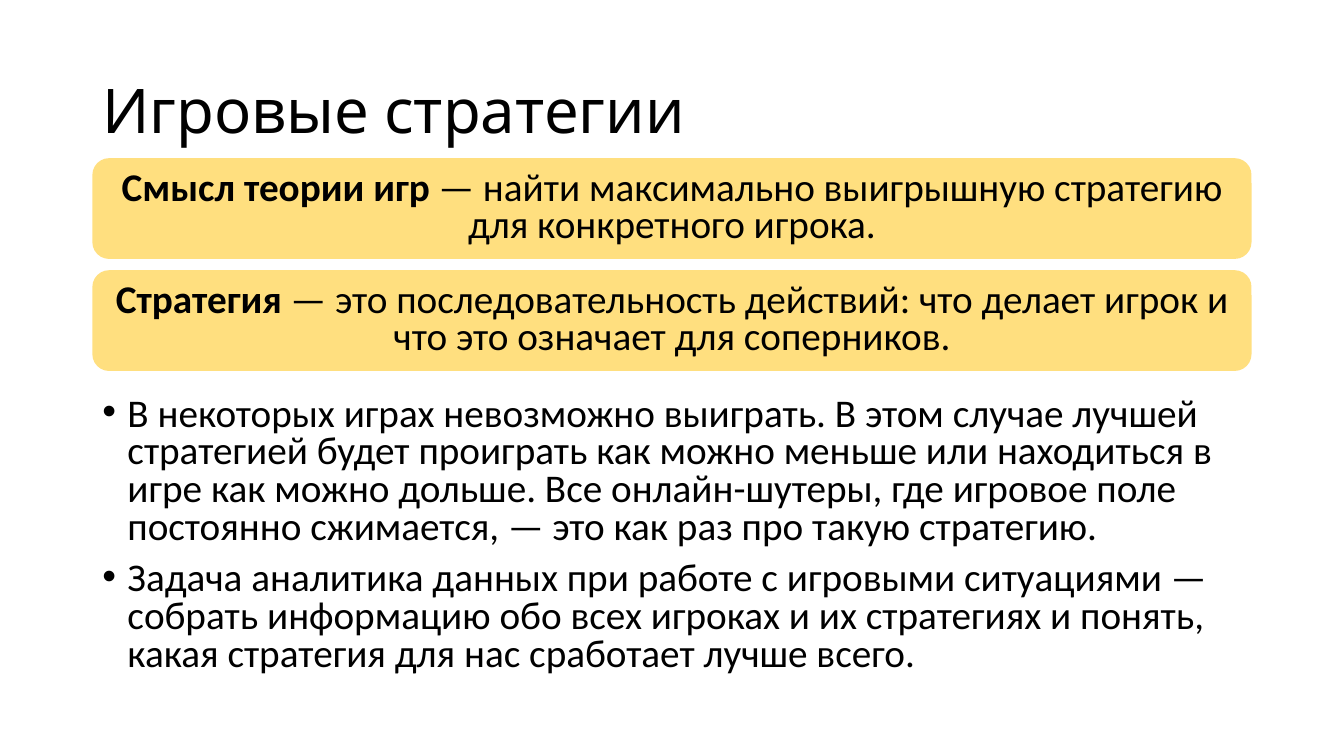
import pptx
import pptx.util
import pptx.dml.color
import pptx.enum.shapes
import pptx.enum.text
import pptx.oxml.ns
from lxml import etree

Pt = pptx.util.Pt
ALIGN = pptx.enum.text.PP_ALIGN
ANCHOR = pptx.enum.text.MSO_ANCHOR

COLOURS = {"text": "000000", "definition": "FFC000"}
LEFT, WIDTH = 66, 828
DEFINITION_TOP, DEFINITION_HEIGHT, DEFINITION_STEP = 113, 72, 80

TITLE = "Игровые стратегии"
DEFINITIONS = [
    ("Смысл теории игр",
     " — найти максимально выигрышную стратегию для конкретного игрока."),
    ("Стратегия",
     " — это последовательность действий: что делает игрок "
     "и что это означает для соперников."),
]
POINTS = [
    "В некоторых играх невозможно выиграть. В этом случае лучшей стратегией "
    "будет проиграть как можно меньше или находиться в игре как можно дольше. "
    "Все онлайн-шутеры, где игровое поле постоянно сжимается, — это как раз "
    "про такую стратегию.",
    "Задача аналитика данных при работе с игровыми ситуациями — собрать "
    "информацию обо всех игроках и их стратегиях и понять, какая стратегия "
    "для нас сработает лучше всего.",
]


def colour(name):
    return pptx.dml.color.RGBColor.from_string(COLOURS[name])


def add_run(paragraph, words, font="Calibri", size=28, bold=False):
    run = paragraph.add_run()
    run.text = words
    run.font.name = font
    run.font.size = Pt(size)
    run.font.bold = bold
    run.font.color.rgb = colour("text")


def space_paragraph(paragraph, line_spacing=0.8, before=10):
    paragraph.line_spacing = line_spacing
    paragraph.space_before = Pt(before)


def add_bullet(paragraph, indent=18):
    """Give the paragraph a round bullet with a hanging indent."""
    properties = paragraph._p.get_or_add_pPr()
    properties.set("marL", str(Pt(indent)))
    properties.set("indent", str(-Pt(indent)))
    font = etree.SubElement(properties, pptx.oxml.ns.qn("a:buFont"))
    font.set("typeface", "Arial")
    bullet = etree.SubElement(properties, pptx.oxml.ns.qn("a:buChar"))
    bullet.set("char", "•")


def add_text_frame(slide, top, height, anchor):
    frame = slide.shapes.add_textbox(
        Pt(LEFT), Pt(top), Pt(WIDTH), Pt(height)).text_frame
    frame.word_wrap = True
    frame.vertical_anchor = anchor
    return frame


def add_title(slide):
    title = add_text_frame(slide, 28.75, 104.4, ANCHOR.MIDDLE).paragraphs[0]
    space_paragraph(title, 0.9, 0)
    add_run(title, TITLE, "Karla", 44)


def add_points(slide):
    frame = add_text_frame(slide, 280, 221, ANCHOR.TOP)
    for index, point in enumerate(POINTS):
        paragraph = frame.add_paragraph() if index else frame.paragraphs[0]
        space_paragraph(paragraph)
        add_bullet(paragraph)
        add_run(paragraph, point)


def add_definition(slide, top, term, meaning):
    """Add a half-transparent rounded panel with a bold term and its meaning."""
    panel = slide.shapes.add_shape(
        pptx.enum.shapes.MSO_SHAPE.ROUNDED_RECTANGLE,
        Pt(LEFT), Pt(top), Pt(WIDTH), Pt(DEFINITION_HEIGHT))
    panel.shadow.inherit = False
    panel.line.fill.background()
    panel.fill.solid()
    panel.fill.fore_color.rgb = colour("definition")
    fill_colour = panel._element.spPr.find(".//" + pptx.oxml.ns.qn("a:srgbClr"))
    etree.SubElement(fill_colour, pptx.oxml.ns.qn("a:alpha")).set("val", "50000")

    frame = panel.text_frame
    frame.word_wrap = True
    frame.vertical_anchor = ANCHOR.MIDDLE
    paragraph = frame.paragraphs[0]
    paragraph.alignment = ALIGN.CENTER
    space_paragraph(paragraph)
    add_run(paragraph, term, bold=True)
    add_run(paragraph, meaning)


def main():
    deck = pptx.Presentation()
    deck.slide_width, deck.slide_height = Pt(960), Pt(540)
    slide = deck.slides.add_slide(deck.slide_layouts[6])
    add_title(slide)
    add_points(slide)
    for index, (term, meaning) in enumerate(DEFINITIONS):
        add_definition(slide, DEFINITION_TOP + index * DEFINITION_STEP, term, meaning)
    deck.save("out.pptx")


if __name__ == "__main__":
    main()
